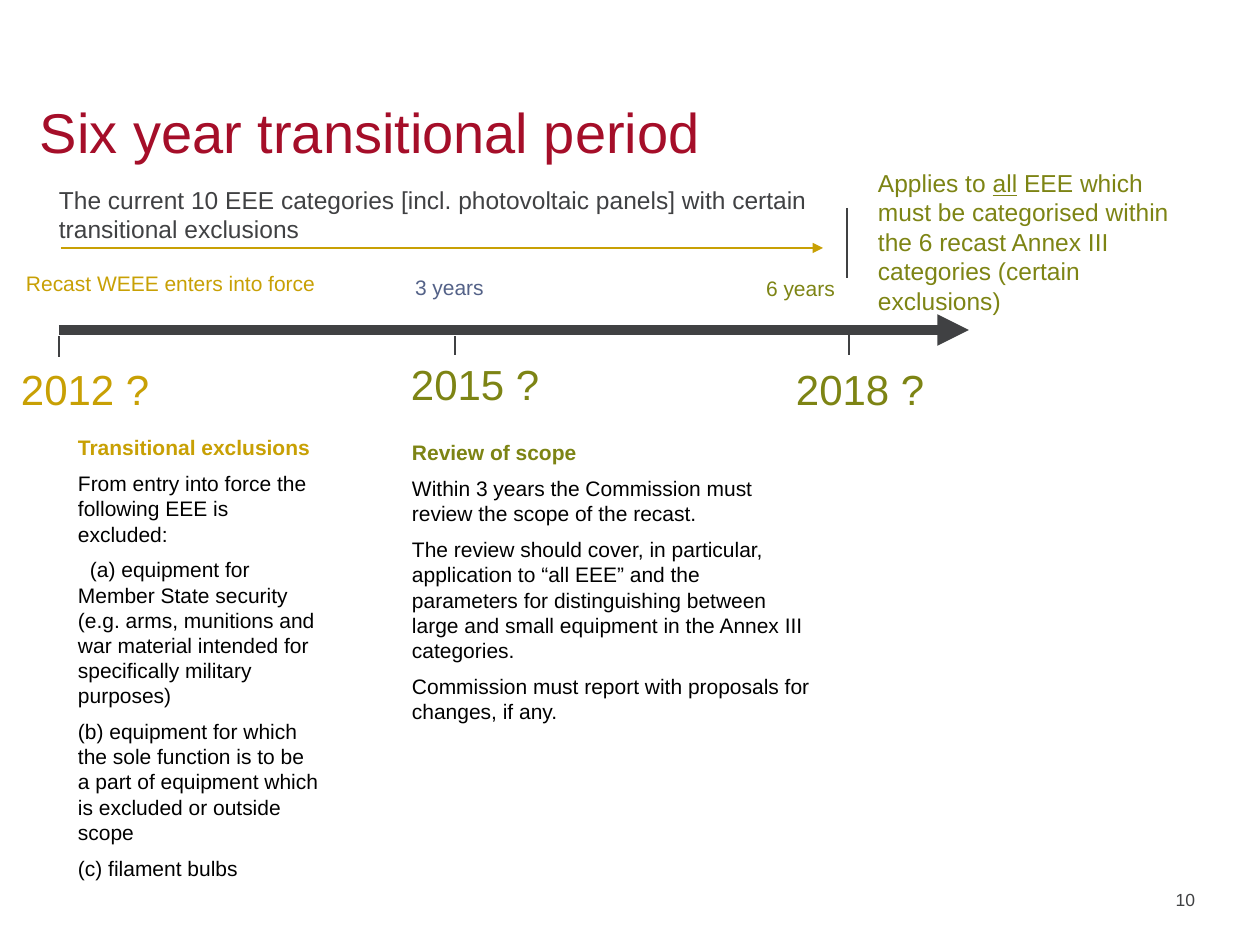
from dataclasses import dataclass
from typing import NamedTuple

from lxml.etree import SubElement
from pptx import Presentation
from pptx.dml.color import RGBColor
from pptx.enum.shapes import MSO_CONNECTOR as Connector
from pptx.enum.text import MSO_ANCHOR as Anchor, MSO_AUTO_SIZE as AutoSize, PP_ALIGN as Align
from pptx.oxml.ns import qn
from pptx.util import Emu, Pt

PX_PER_INCH = 126


@dataclass(frozen=True)
class Theme:
    font: str = "Arial"
    red: str = "A50E29"
    gold: str = "C8A004"
    olive: str = "7D8414"
    slate: str = "546288"
    grey: str = "404143"
    black: str = "000000"
    title: int = 32
    year: int = 24
    lead: int = 14
    body: int = 12
    number: int = 10
    gap: int = 6
    thin: float = 0.75
    thick: float = 6


class Box(NamedTuple):
    x: int
    y: int
    w: int
    h: int


class Label(NamedTuple):
    text: str
    box: Box
    size: int
    color: str


class Line(NamedTuple):
    x1: int
    y1: int
    x2: int
    y2: int
    color: str
    width: float
    arrow: bool = False


class Column(NamedTuple):
    box: Box
    heading: str
    color: str
    paragraphs: tuple[str, ...]


T = Theme()


def px(n: int) -> Emu:
    return Emu(round(n * 914400 / PX_PER_INCH))


def place(sp, box: Box) -> None:
    sp.left, sp.top, sp.width, sp.height = map(px, box)


def add_run(p, text: str, *, size: int, color: str, bold: bool = False,
            underline: bool = False) -> None:
    r = p.add_run()
    r.text = text
    f = r.font
    f.name, f.size, f.bold, f.underline = T.font, Pt(size), bold, underline
    f.color.rgb = RGBColor.from_string(color)


def set_frame(sp, *, inset: int = 0, anchor=Anchor.TOP):
    tf = sp.text_frame
    tf.word_wrap = True
    tf.auto_size = AutoSize.NONE
    tf.vertical_anchor = anchor
    tf.margin_left = tf.margin_top = tf.margin_right = tf.margin_bottom = px(inset)
    return tf


def add_box(s, box: Box, **frame):
    return set_frame(s.shapes.add_textbox(*map(px, box)), **frame)


def add_label(s, label: Label) -> None:
    p = add_box(s, label.box).paragraphs[0]
    add_run(p, label.text, size=label.size, color=label.color)


def add_line(s, line: Line) -> None:
    c = s.shapes.add_connector(Connector.STRAIGHT, px(line.x1), px(line.y1),
                               px(line.x2), px(line.y2))
    c.line.color.rgb = RGBColor.from_string(line.color)
    c.line.width = Pt(line.width)
    spPr = c._element.spPr
    if line.arrow:
        SubElement(spPr.find(qn("a:ln")), qn("a:tailEnd"), type="triangle")
    SubElement(spPr, qn("a:effectLst"))


def fill_column(sp, col: Column) -> None:
    place(sp, col.box)
    tf = set_frame(sp, inset=25)
    for i, text in enumerate((col.heading, *col.paragraphs)):
        p = tf.add_paragraph() if i else tf.paragraphs[0]
        pPr = p._p.get_or_add_pPr()
        pPr.set("marL", str(px(63)))
        # The first list item starts slightly further in
        pPr.set("indent", str(px(12 if text.startswith("(a)") else 0)))
        SubElement(pPr, qn("a:buNone"))
        p.alignment = Align.LEFT
        p.space_before = Pt(T.gap if i else 0)
        add_run(p, text, size=T.body, color=T.black if i else col.color, bold=i == 0)


LABELS = (
    Label("The current 10 EEE categories [incl. photovoltaic panels] with certain "
          "transitional exclusions", Box(59, 185, 771, 102), T.lead, T.grey),
    Label("2012 ?", Box(21, 364, 213, 50), T.year, T.gold),
    Label("2015 ?", Box(411, 359, 213, 50), T.year, T.olive),
    Label("2018 ?", Box(796, 364, 213, 50), T.year, T.olive),
    Label("Recast WEEE enters into force", Box(26, 271, 294, 25), T.body, T.gold),
    Label("3 years", Box(415, 275, 294, 25), T.body, T.slate),
    Label("6 years", Box(766, 276, 294, 25), T.body, T.olive),
)

LINES = (
    Line(59, 330, 969, 330, T.grey, T.thick, arrow=True),
    Line(61, 248, 823, 248, T.gold, T.thin, arrow=True),
    Line(847, 208, 847, 278, T.grey, T.thin),
    Line(59, 336, 59, 357, T.grey, T.thin),
    Line(455, 336, 455, 355, T.grey, T.thin),
    Line(849, 334, 849, 355, T.grey, T.thin),
)

COLUMNS = (
    Column(Box(-10, 410, 354, 597), "Transitional exclusions", T.gold, (
        "From entry into force the following EEE is excluded:",
        "(a) equipment for Member State security (e.g. arms, munitions and war material "
        "intended for specifically military purposes)",
        "(b) equipment for which the sole function is to be a part of equipment which is "
        "excluded or outside scope",
        "(c) filament bulbs",
    )),
    Column(Box(324, 415, 511, 471), "Review of scope", T.olive, (
        "Within 3 years the Commission must review the scope of the recast.",
        "The review should cover, in particular, application to “all EEE” and the parameters "
        "for distinguishing between large and small equipment in the Annex III categories.",
        "Commission must report with proposals for changes, if any.",
    )),
)


def main() -> None:
    prs = Presentation()
    prs.slide_width, prs.slide_height = px(1260), px(945)
    s = prs.slides.add_slide(prs.slide_layouts.get_by_name("Two Content"))
    title, *bodies = s.placeholders

    # Title
    place(title, Box(40, 40, 1128, 125))
    p = set_frame(title, anchor=Anchor.BOTTOM).paragraphs[0]
    p.alignment = Align.LEFT
    add_run(p, "Six year transitional period", size=T.title, color=T.red)

    # Timeline
    for line in LINES:
        add_line(s, line)
    for label in LABELS:
        add_label(s, label)

    # Scope after the transition
    p = add_box(s, Box(878, 168, 320, 146)).paragraphs[0]
    for text, underline in (
        ("Applies to ", False),
        ("all", True),
        (" EEE which must be categorised within the 6 recast Annex III categories "
         "(certain exclusions)", False),
    ):
        add_run(p, text, size=T.lead, color=T.olive, underline=underline)

    # Explanatory columns
    for sp, col in zip(bodies, COLUMNS):
        fill_column(sp, col)

    # Slide number
    p = add_box(s, Box(1081, 850, 114, 60), anchor=Anchor.BOTTOM).paragraphs[0]
    p.alignment = Align.RIGHT
    add_run(p, "10", size=T.number, color=T.grey)

    prs.save("out.pptx")


if __name__ == "__main__":
    main()
